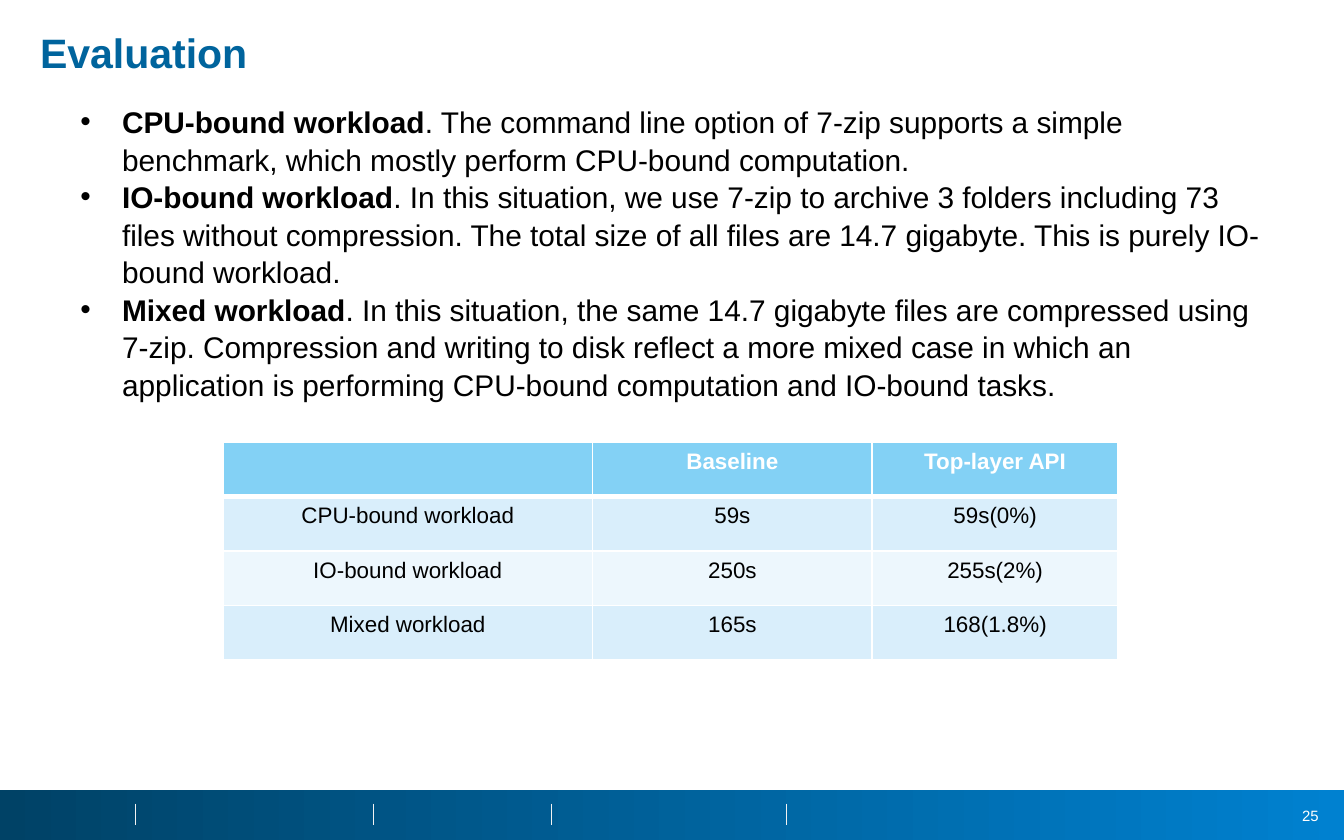
from lxml import etree
from pptx import Presentation
from pptx.dml.color import RGBColor
from pptx.enum.shapes import MSO_CONNECTOR, MSO_SHAPE
from pptx.enum.text import MSO_ANCHOR, PP_ALIGN
from pptx.oxml.ns import qn
from pptx.util import Inches, Pt

RECT = MSO_SHAPE.RECTANGLE
LINE = MSO_CONNECTOR.STRAIGHT
TOP, MIDDLE = MSO_ANCHOR.TOP, MSO_ANCHOR.MIDDLE
LEFT, CENTER, RIGHT = PP_ALIGN.LEFT, PP_ALIGN.CENTER, PP_ALIGN.RIGHT
FONT = "Arial"
COLORS = {
    "title": "00649D", "text": "000000", "white": "FFFFFF",
    "dark": "004266", "bright": "0081D0", "mark": "F2F2F2",
    "head": "83D1F5", "odd": "D9EEFB", "even": "EDF7FD",
}
MARKS = [1.01, 2.78, 4.1, 5.85]
POINTS = [
    ("CPU-bound workload",
     ". The command line option of 7-zip supports a simple benchmark, "
     "which mostly perform CPU-bound computation."),
    ("IO-bound workload",
     ". In this situation, we use 7-zip to archive 3 folders including 73 "
     "files without compression. The total size of all files are 14.7 "
     "gigabyte. This is purely IO-bound workload."),
    ("Mixed workload",
     ". In this situation, the same 14.7 gigabyte files are compressed using "
     "7-zip. Compression and writing to disk reflect a more mixed case in "
     "which an application is performing CPU-bound computation and IO-bound "
     "tasks."),
]
ROWS = [
    ("", "Baseline", "Top-layer API"),
    ("CPU-bound workload", "59s", "59s(0%)"),
    ("IO-bound workload", "250s", "255s(2%)"),
    ("Mixed workload", "165s", "168(1.8%)"),
]
WIDTHS = [2.75, 2.08, 1.83]


def color(name):
    return RGBColor.from_string(COLORS[name])


def add_run(para, text, size, tint, bold=False):
    run = para.add_run()
    run.text = text
    font = run.font
    font.name, font.size, font.bold = FONT, Pt(size), bold
    font.color.rgb = color(tint)


def add_box(slide, place, anchor=TOP):
    frame = slide.shapes.add_textbox(*map(Inches, place)).text_frame
    frame.word_wrap = True
    frame.vertical_anchor = anchor
    return frame


def add_label(slide, place, text, size, tint, bold=False, align=LEFT,
              anchor=TOP, space=1.0):
    para = add_box(slide, place, anchor).paragraphs[0]
    para.alignment = align
    para.line_spacing = space
    add_run(para, text, size, tint, bold)


def add_bullet(para):
    props = para._p.get_or_add_pPr()
    indent = Inches(0.31)
    props.set("marL", str(indent))
    props.set("indent", str(-indent))
    etree.SubElement(props, qn("a:buFont"), typeface=FONT)
    etree.SubElement(props, qn("a:buChar"), char="•")


def add_points(slide):
    frame = add_box(slide, (0.5, 0.71, 8.99, 2.26))
    for i, (lead, rest) in enumerate(POINTS):
        para = frame.add_paragraph() if i else frame.paragraphs[0]
        add_bullet(para)
        para.line_spacing = 1.05
        add_run(para, lead, 16, "text", True)
        add_run(para, rest, 16, "text")


def set_edges(cell, top, bottom):
    """Draw white cell borders; top and bottom are widths in points."""
    props = cell._tc.get_or_add_tcPr()
    sides = {"lnL": 1, "lnR": 1, "lnT": top, "lnB": bottom}
    for i, (side, width) in enumerate(sides.items()):
        edge = etree.Element(qn(f"a:{side}"), w=str(Pt(width)))
        fill = etree.SubElement(edge, qn("a:solidFill"))
        etree.SubElement(fill, qn("a:srgbClr"), val=COLORS["white"])
        props.insert(i, edge)


def add_results(slide):
    place = map(Inches, (1.66, 3.29, sum(WIDTHS), 1.62))
    table = slide.shapes.add_table(len(ROWS), len(WIDTHS), *place).table
    table.horz_banding = False
    for col, width in zip(table.columns, WIDTHS):
        col.width = Inches(width)
    for r, row in enumerate(ROWS):
        head = r == 0
        shade = "head" if head else "odd" if r % 2 else "even"
        for c, text in enumerate(row):
            cell = table.cell(r, c)
            cell.fill.solid()
            cell.fill.fore_color.rgb = color(shade)
            set_edges(cell, 3 if r == 1 else 1, 3 if head else 1)
            if text:
                para = cell.text_frame.paragraphs[0]
                para.alignment = CENTER
                add_run(para, text, 12, "white" if head else "text", head)


def add_footer(slide):
    place = map(Inches, (0, 5.88, 10, 0.38))
    band = slide.shapes.add_shape(RECT, *place)
    band.shadow.inherit = False
    band.line.fill.background()
    band.fill.gradient()
    band.fill.gradient_angle = 0
    for stop, spot, tint in zip(band.fill.gradient_stops, (0, 1),
                                ("dark", "bright")):
        stop.position = spot
        stop.color.rgb = color(tint)
    for x in MARKS:
        ends = map(Inches, (x, 5.98, x, 6.14))
        mark = slide.shapes.add_connector(LINE, *ends)
        mark.line.color.rgb = color("mark")
        mark.line.width = Pt(0.25)
        etree.SubElement(mark._element.spPr, qn("a:effectLst"))
    add_label(slide, (9.49, 5.95, 0.42, 0.24), "25", 8, "white",
              align=RIGHT, anchor=MIDDLE)


def main():
    deck = Presentation()
    deck.slide_width, deck.slide_height = Inches(10), Inches(6.25)
    slide = deck.slides.add_slide(deck.slide_layouts[6])
    add_footer(slide)
    add_points(slide)
    add_results(slide)
    add_label(slide, (0.2, 0.2, 9.59, 0.36), "Evaluation", 22, "title",
              bold=True, space=0.9)
    deck.save("out.pptx")


if __name__ == "__main__":
    main()
